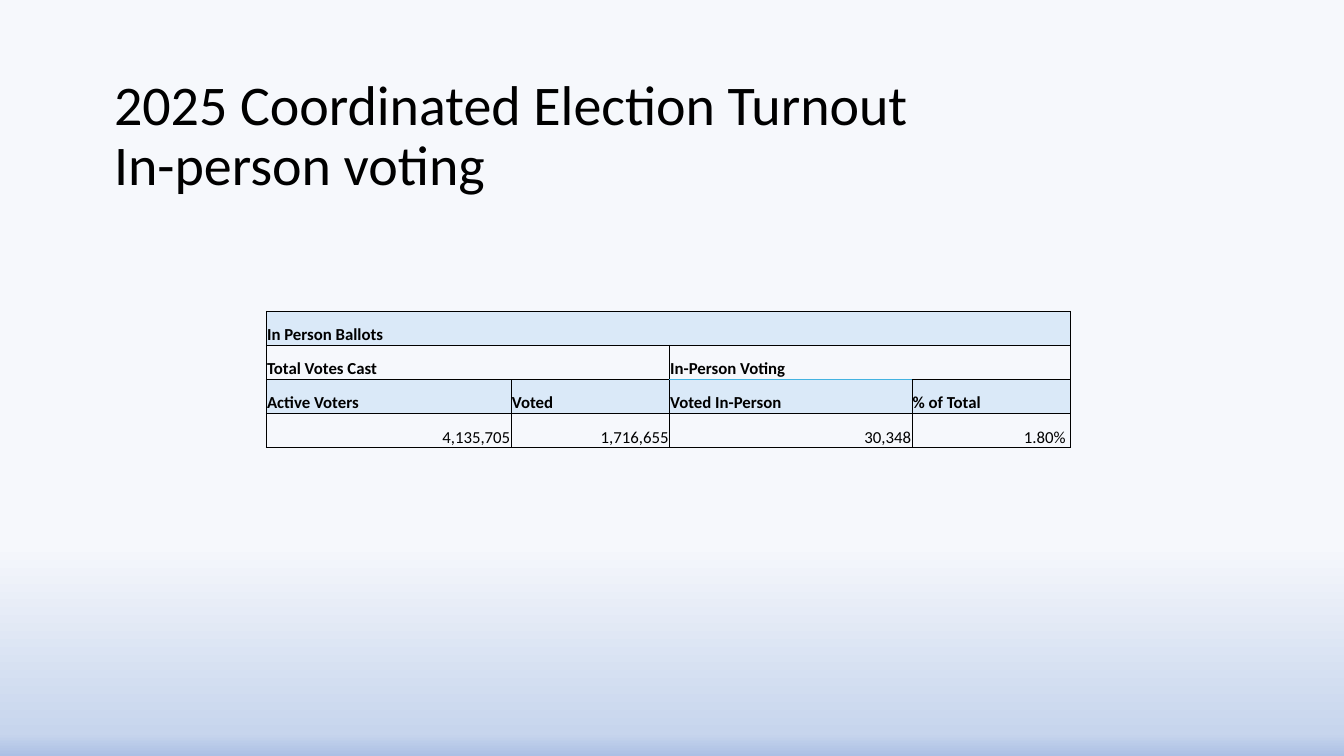
from lxml import etree
from pptx import Presentation
from pptx.dml.color import RGBColor as RGB
from pptx.enum.text import MSO_ANCHOR as ANCHOR, PP_ALIGN as ALIGN
from pptx.oxml.ns import qn
from pptx.util import Cm, Pt

COLORS = {"text": "000000", "band": "DAE9F8", "accent": "44B3E1"}
BACKGROUND_STOPS = [(72, "F6F8FC"), (97, "C7D5ED"), (100, "ABC0E4")]
COL_WIDTHS = [6.17, 3.99, 6.11, 3.99]
ROW_HEIGHT = 0.86
BALLOTS = [
    ["In Person Ballots", "", "", ""],
    ["Total Votes Cast", "", "In-Person Voting", ""],
    ["Active Voters", "Voted", "Voted In-Person", "% of Total"],
    ["4,135,705", "1,716,655", "30,348", "1.80% "],
]
ACCENT_EDGES = {(1, 2, "B"), (2, 2, "T")}


class Deck:
    font = "Calibri"

    def __init__(self):
        self.prs = Presentation()
        self.prs.slide_width, self.prs.slide_height = Cm(33.87), Cm(19.05)
        self.slide = self.prs.slides.add_slide(self.prs.slide_layouts[5])

    def style(self, p, size, bold=False, align=ALIGN.LEFT):
        p.alignment = align
        p.font.name, p.font.size, p.font.bold = self.font, Pt(size), bold
        p.font.color.rgb = RGB.from_string(COLORS["text"])

    def background(self, stops):
        fill = self.slide.background.fill
        fill.gradient()
        fill.gradient_angle = 270
        gs_list = self.slide.element.find(".//" + qn("a:gsLst"))
        gs_list.clear()
        for percent, color in stops:
            gs = etree.SubElement(gs_list, qn("a:gs"), pos=str(percent * 1000))
            etree.SubElement(gs, qn("a:srgbClr"), val=color)

    def title(self, text, left, top, width, height):
        sp = self.slide.shapes.title
        sp.left, sp.top, sp.width, sp.height = map(Cm, (left, top, width, height))
        tf = sp.text_frame
        tf.text = text
        tf.word_wrap = True
        tf.vertical_anchor = ANCHOR.MIDDLE
        p = tf.paragraphs[0]
        p.line_spacing = 0.9
        self.style(p, 40)

    def border(self, cell, side, color):
        """Set one edge of a cell; a color of None hides it."""
        ln = etree.SubElement(cell._tc.get_or_add_tcPr(), qn(f"a:ln{side}"), w=str(Pt(0.5)))
        if color is None:
            etree.SubElement(ln, qn("a:noFill"))
        else:
            fill = etree.SubElement(ln, qn("a:solidFill"))
            etree.SubElement(fill, qn("a:srgbClr"), val=color)

    def table(self, rows, left, top):
        """Draw the grid; the last row holds figures, an empty text continues the cell before."""
        frame = self.slide.shapes.add_table(
            len(rows), len(COL_WIDTHS), Cm(left), Cm(top),
            Cm(sum(COL_WIDTHS)), Cm(ROW_HEIGHT * len(rows)))
        table = frame.table
        table.first_row = table.horz_banding = False
        for column, width in zip(table.columns, COL_WIDTHS):
            column.width = Cm(width)
        for row in table.rows:
            row.height = Cm(ROW_HEIGHT)
        for r, texts in enumerate(rows):
            for c, text in enumerate(texts):
                cell = table.cell(r, c)
                self.cell_text(cell, text, figures=r == len(rows) - 1)
                hidden = {"L": not text, "R": c + 1 < len(texts) and not texts[c + 1]}
                for side in "LRTB":
                    key = "accent" if (r, c, side) in ACCENT_EDGES else "text"
                    self.border(cell, side, None if hidden.get(side) else COLORS[key])
                if r % 2 == 0:
                    cell.fill.solid()
                    cell.fill.fore_color.rgb = RGB.from_string(COLORS["band"])
                else:
                    cell.fill.background()

    def cell_text(self, cell, text, figures):
        cell.text = text
        cell.vertical_anchor = ANCHOR.BOTTOM
        cell.margin_left = cell.margin_right = cell.margin_top = Cm(0.02)
        cell.margin_bottom = 0
        self.style(cell.text_frame.paragraphs[0], 12, not figures,
                   ALIGN.RIGHT if figures else ALIGN.LEFT)


def main():
    deck = Deck()
    deck.background(BACKGROUND_STOPS)
    deck.title("2025 Coordinated Election Turnout\vIn-person voting", 2.62, 1.02, 29.21, 4.88)
    deck.table(BALLOTS, 6.71, 7.84)
    deck.prs.save("out.pptx")


if __name__ == "__main__":
    main()
